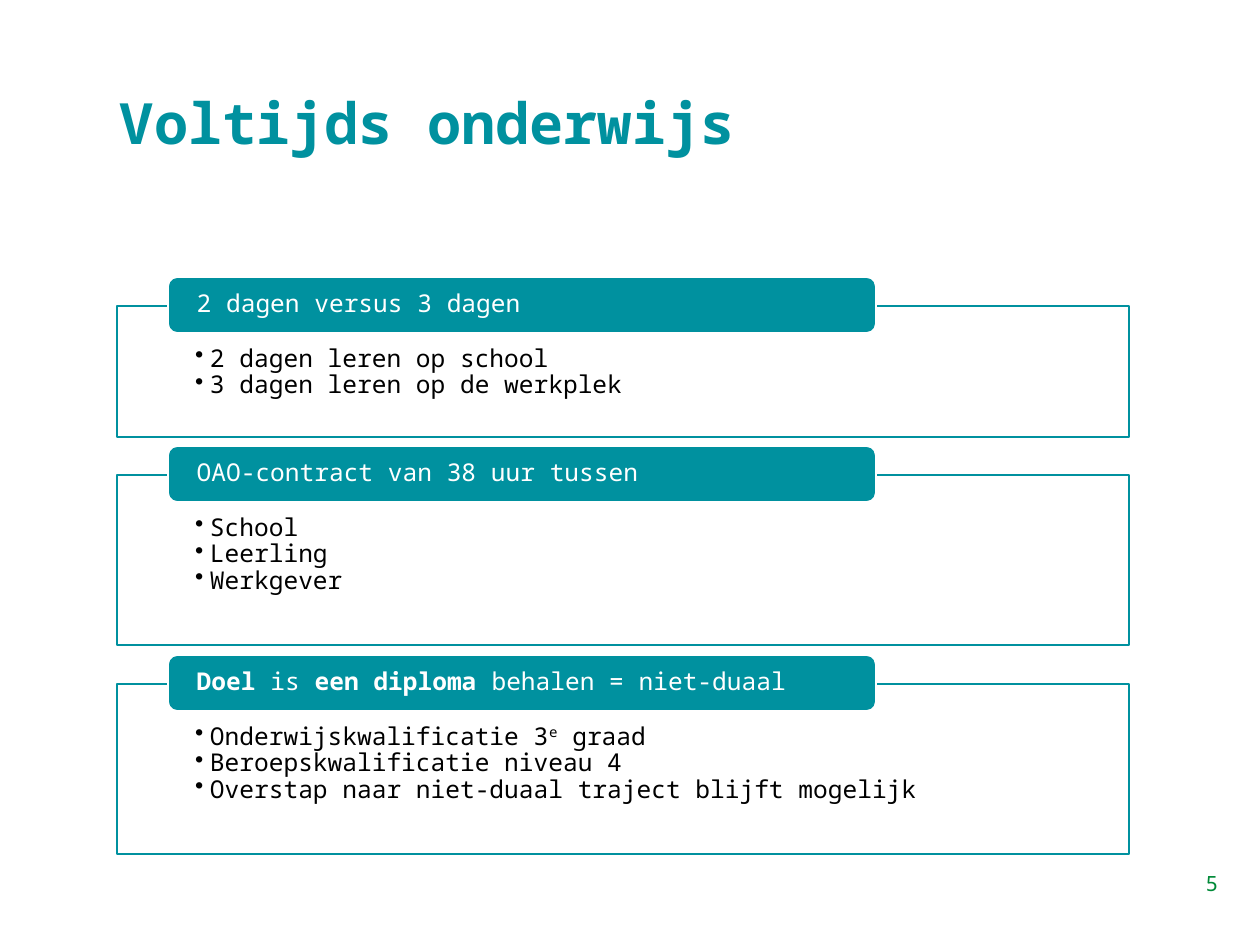
from lxml.etree import SubElement
from pptx import Presentation
from pptx.dml.color import RGBColor
from pptx.enum.shapes import MSO_SHAPE as Shape
from pptx.enum.text import MSO_ANCHOR as Anchor, PP_ALIGN as Align
from pptx.oxml.ns import qn
from pptx.util import Emu, Pt

SCALE = 914400 / 126
FONT = "Noto Sans Mono"
COLORS = {"teal": "00919F", "green": "008A38", "white": "FFFFFF", "black": "000000"}

# Each section: top, height, heading runs, bullet runs
SECTIONS = [
    (306, 131, [("2 dagen versus 3 dagen", "")],
     [[("2 dagen leren op school", "")],
      [("3 dagen leren op de werkplek", "")]]),
    (475, 170, [("OAO-contract van 38 uur tussen", "")],
     [[("School", "")], [("Leerling", "")], [("Werkgever", "")]]),
    (684, 170, [("Doel", "bold"), (" is ", ""), ("een diploma ", "bold"),
                ("behalen = niet-duaal", "")],
     [[("Onderwijskwalificatie 3", ""), ("e", "super"), (" graad", "")],
      [("Beroepskwalificatie niveau 4", "")],
      [("Overstap naar niet-duaal traject blijft mogelijk", "")]]),
]


def px(value):
    return Emu(round(value * SCALE))


def color(name):
    return RGBColor.from_string(COLORS[name])


def set_frame(shape, insets, anchor):
    frame = shape.text_frame
    frame.word_wrap = True
    frame.vertical_anchor = anchor
    (frame.margin_left, frame.margin_top,
     frame.margin_right, frame.margin_bottom) = map(px, insets)
    return frame


def add_runs(para, runs, size, color_name, spacing=0.9):
    para.line_spacing = spacing
    for text, style in runs:
        span = para.add_run()
        span.text = text
        span.font.name = FONT
        span.font.size = Pt(size)
        span.font.bold = style == "bold"
        span.font.color.rgb = color(color_name)
        if style == "super":
            span.font._element.set("baseline", "30000")


def add_bullet(para):
    props = para._p.get_or_add_pPr()
    props.set("marL", str(px(15)))
    props.set("indent", str(px(-15)))
    SubElement(props, qn("a:buChar"), char="•")


def add_label(page, bounds, runs, size, color_name, align, anchor, spacing):
    box = page.shapes.add_textbox(*map(px, bounds))
    para = set_frame(box, (0, 0, 0, 0), anchor).paragraphs[0]
    para.alignment = align
    add_runs(para, runs, size, color_name, spacing)


def add_panel(page, kind, bounds, fill, line):
    panel = page.shapes.add_shape(kind, *map(px, bounds))
    panel.shadow.inherit = False
    panel.fill.solid()
    panel.fill.fore_color.rgb = color(fill)
    panel.line.color.rgb = color(line)
    panel.line.width = Pt(1)
    return panel


def add_section(page, top, height, heading, bullets):
    # Outlined body with bullets
    body = add_panel(page, Shape.RECTANGLE, (117, top, 1012, height), "white", "teal")
    frame = set_frame(body, (78, 40, 78, 14), Anchor.TOP)
    for index, runs in enumerate(bullets):
        para = frame.add_paragraph() if index else frame.paragraphs[0]
        para.alignment = Align.LEFT
        add_bullet(para)
        add_runs(para, runs, 14, "black")

    # Heading bar across the top edge
    bar = add_panel(page, Shape.ROUNDED_RECTANGLE, (168, top - 29, 708, 56), "teal", "white")
    para = set_frame(bar, (26, 0, 26, 0), Anchor.MIDDLE).paragraphs[0]
    para.alignment = Align.LEFT
    add_runs(para, heading, 14, "white")


def main():
    deck = Presentation()
    deck.slide_width, deck.slide_height = px(1260), px(945)
    page = deck.slides.add_slide(deck.slide_layouts[6])

    # Title
    add_label(page, (120, 91, 1009, 166), [("Voltijds onderwijs", "bold")],
              32.5, "teal", Align.LEFT, Anchor.TOP, 0.98)

    for section in SECTIONS:
        add_section(page, *section)

    # Page number
    add_label(page, (1174, 873, 76, 24), [("5", "")],
              12, "green", Align.CENTER, Anchor.MIDDLE, 0.9)

    deck.save("out.pptx")


if __name__ == "__main__":
    main()
